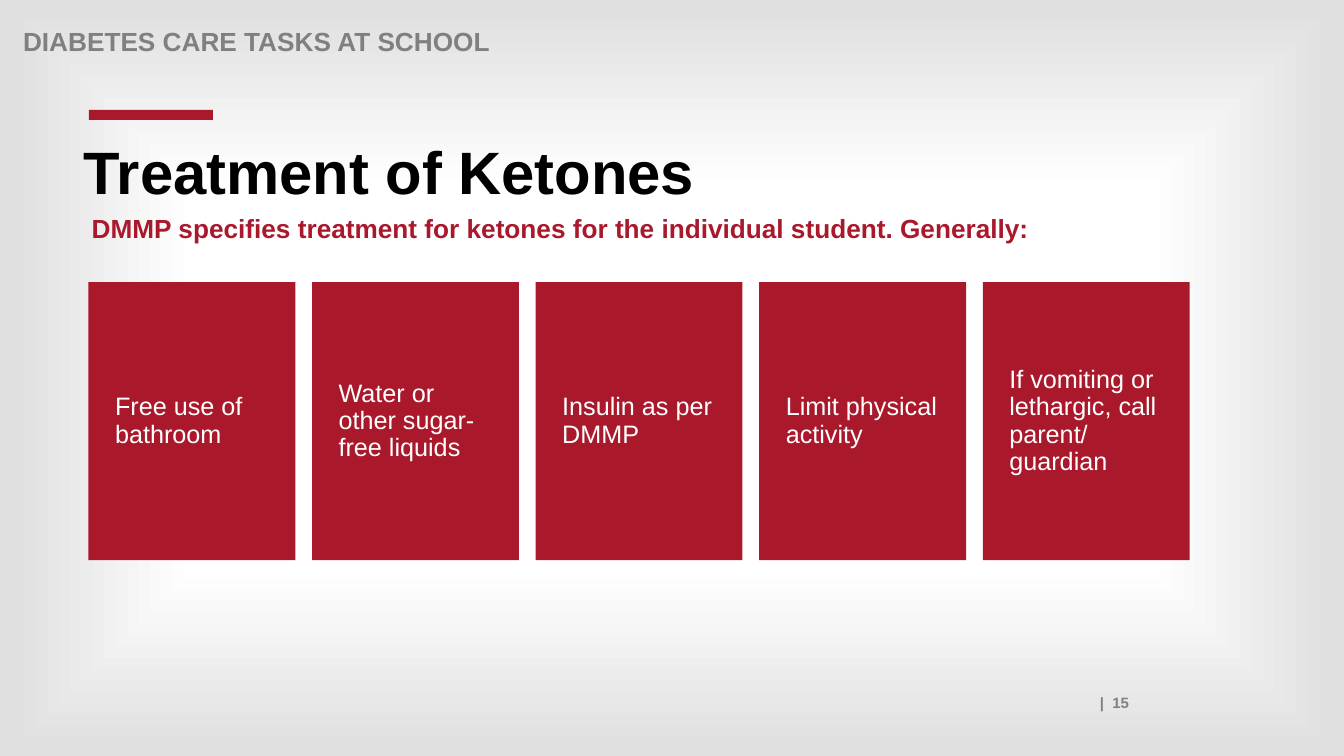
"""Build the slide on treatment of ketones."""
from pptx import Presentation
from pptx.dml.color import RGBColor
from pptx.enum.shapes import MSO_SHAPE
from pptx.enum.text import MSO_ANCHOR, PP_ALIGN
from pptx.oxml import parse_xml
from pptx.oxml.ns import nsdecls
from pptx.util import Pt

RED = RGBColor(0xAA, 0x18, 0x2C)
GRAY = RGBColor(0x80, 0x80, 0x80)
BLACK = RGBColor(0, 0, 0)
WHITE = RGBColor(0xFF, 0xFF, 0xFF)
PALE = RGBColor(0xE0, 0xE0, 0xE0)

STOPS = [(12, WHITE), (50, WHITE), (98, PALE)]
TASKS = [
    "Free use of bathroom",
    "Water or other sugar-free liquids",
    "Insulin as per DMMP",
    "Limit physical activity",
    "If vomiting or lethargic, call parent/ guardian",
]
LEFT, TOP, WIDE, HIGH, STEP = 63.2, 201.6, 147.8, 198.6, 159.7


class Deck:
    """Hold the style and the current slide."""

    font = "Arial"

    def __init__(self, wide, high):
        """Start a deck with one blank slide."""
        self.show = Presentation()
        self.show.slide_width, self.show.slide_height = Pt(wide), Pt(high)
        self.slide = self.show.slides.add_slide(self.show.slide_layouts[6])

    def back(self, stops):
        """Fill the background with a gradient from the centre outwards."""
        self.slide.background.fill.gradient()
        old = self.slide.element.xpath(".//a:gradFill")[0]
        marks = "".join(
            f'<a:gs pos="{spot * 1000}"><a:srgbClr val="{tint}"/></a:gs>'
            for spot, tint in stops
        )
        new = parse_xml(
            f'<a:gradFill {nsdecls("a")} rotWithShape="1"><a:gsLst>{marks}</a:gsLst>'
            '<a:path path="shape"><a:fillToRect l="50000" t="50000" r="50000"'
            ' b="50000"/></a:path></a:gradFill>'
        )
        old.getparent().replace(old, new)

    def block(self, *area):
        """Draw a plain red rectangle."""
        shape = self.slide.shapes.add_shape(MSO_SHAPE.RECTANGLE, *map(Pt, area))
        shape.shadow.inherit = False
        shape.fill.solid()
        shape.fill.fore_color.rgb = RED
        shape.line.fill.background()
        return shape

    def words(self, shape, text, size, tint, bold=False, frame=None, para=None):
        """Put one styled paragraph into a shape."""
        body = shape.text_frame
        line = body.paragraphs[0]
        line.text = text
        line.font.color.rgb = tint
        styles = [
            (body, {"word_wrap": True, **(frame or {})}),
            (line, {"alignment": PP_ALIGN.LEFT, **(para or {})}),
            (line.font, {"name": self.font, "size": Pt(size), "bold": bold}),
        ]
        for item, style in styles:
            for key, value in style.items():
                setattr(item, key, value)

    def label(self, area, *style, **more):
        """Add a text box."""
        self.words(self.slide.shapes.add_textbox(*map(Pt, area)), *style, **more)

    def card(self, area, text):
        """Add a red card with its text in the middle."""
        frame = {
            "vertical_anchor": MSO_ANCHOR.MIDDLE,
            "margin_left": Pt(19),
            "margin_right": Pt(18),
        }
        self.words(self.block(*area), text, 18, WHITE, frame=frame,
                   para={"line_spacing": 0.9})


def main():
    """Lay out the slide and save it."""
    deck = Deck(960, 540)
    deck.back(STOPS)
    tight = {"line_spacing": 0.9}
    deck.label((87, 491.8, 726.5, 20), "|  15", 10.7, GRAY, True,
               para={"alignment": PP_ALIGN.RIGHT})
    deck.label((9.4, 17.3, 792, 20), "DIABETES CARE TASKS AT SCHOOL",
               18.7, GRAY, True, para=tight)
    deck.block(63.5, 78.5, 88.6, 7.2)
    deck.label((52.6, 98.6, 792, 66), "Treatment of Ketones",
               42.7, BLACK, True, para=tight)
    deck.label((58.4, 148.4, 706, 30),
               "DMMP specifies treatment for ketones for the individual student."
               " Generally:", 18.7, RED, True)
    for spot, task in enumerate(TASKS):
        deck.card((LEFT + spot * STEP, TOP, WIDE, HIGH), task)
    deck.show.save("out.pptx")


if __name__ == "__main__":
    main()
